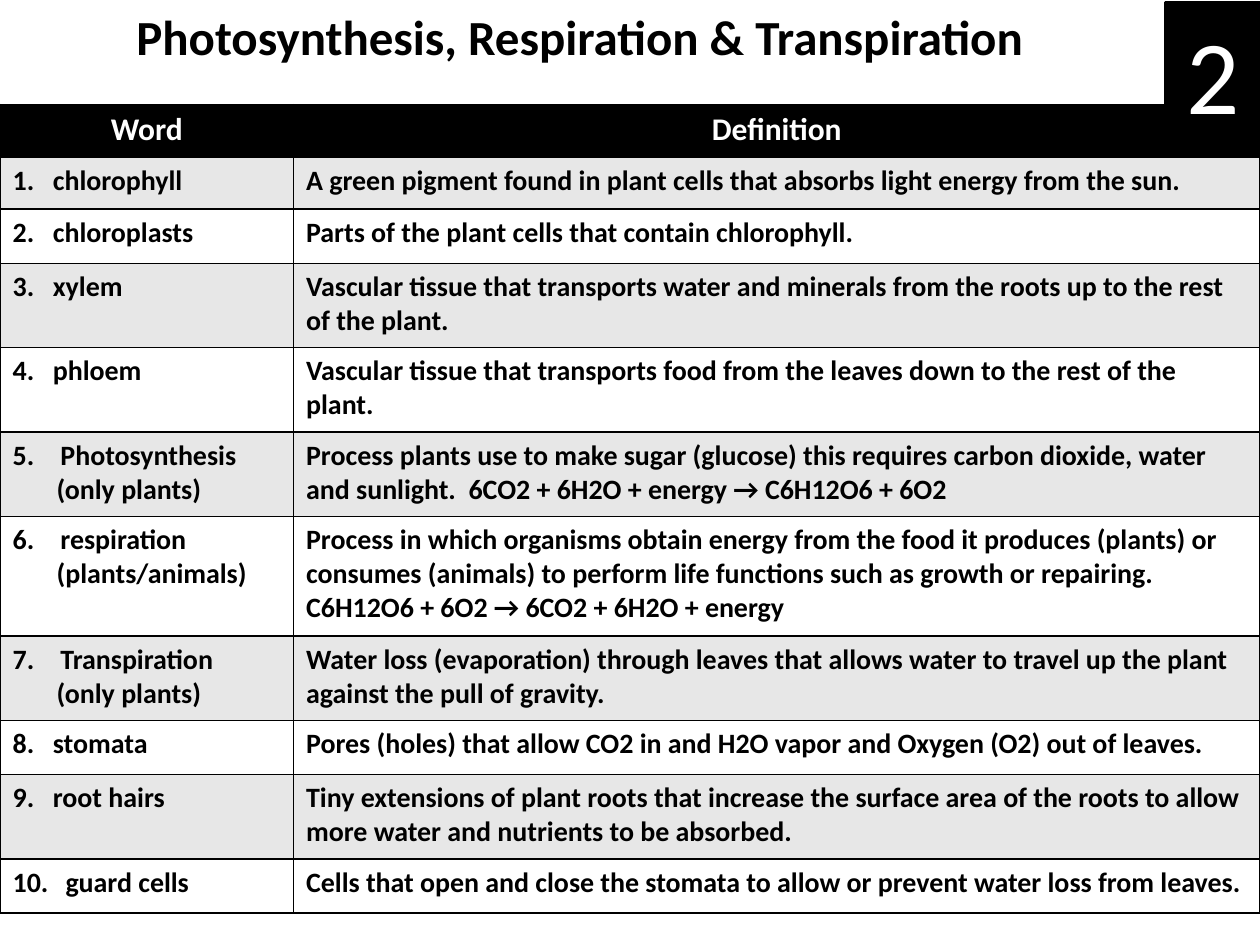
from lxml import etree
from pptx import Presentation
from pptx.dml.color import RGBColor
from pptx.enum.shapes import MSO_SHAPE
from pptx.enum.text import MSO_ANCHOR, PP_ALIGN
from pptx.oxml.ns import qn
from pptx.util import Inches, Pt

RECT = MSO_SHAPE.RECTANGLE
TOP, MIDDLE = MSO_ANCHOR.TOP, MSO_ANCHOR.MIDDLE
LEFT, CENTER = PP_ALIGN.LEFT, PP_ALIGN.CENTER
WIDTH, HEIGHT = Inches(10), Inches(7.5)
FONT = "Calibri"
HUES = {"ink": "000000", "paper": "FFFFFF", "band": "E7E7E7"}
COLS = [2.33, 7.67]
ROWS = [0.42, 0.41, 0.43, 0.67, 0.67, 0.67, 0.95, 0.67, 0.43, 0.67, 0.43]
NEAR, SUB, FAR, LAST = 0.32, 0.35, 0.38, 0.42

TERMS = [
    ("chlorophyll", "", NEAR,
     "A green pigment found in plant cells that absorbs light energy from the sun."),
    ("chloroplasts", "", NEAR,
     "Parts of the plant cells that contain chlorophyll."),
    ("xylem", "", NEAR,
     "Vascular tissue that transports water and minerals from the roots up to the rest of the plant."),
    ("phloem", "", NEAR,
     "Vascular tissue that transports food from the leaves down to the rest of the plant."),
    ("Photosynthesis", "(only plants)", FAR,
     "Process plants use to make sugar (glucose) this requires carbon dioxide, water and sunlight. "
     " 6CO2 + 6H2O + energy → C6H12O6 + 6O2"),
    ("respiration", "(plants/animals)", FAR,
     "Process in which organisms obtain energy from the food it produces (plants) or consumes "
     "(animals) to perform life functions such as growth or repairing. "
     "C6H12O6 + 6O2 → 6CO2 + 6H2O + energy"),
    ("Transpiration", "(only plants)", FAR,
     "Water loss (evaporation) through leaves that allows water to travel up the plant against "
     "the pull of gravity."),
    ("stomata", "", NEAR,
     "Pores (holes) that allow CO2 in and H2O vapor and Oxygen (O2) out of leaves."),
    ("root hairs", "", NEAR,
     "Tiny extensions of plant roots that increase the surface area of the roots to allow more "
     "water and nutrients to be absorbed."),
    ("guard cells", "", LAST,
     "Cells that open and close the stomata to allow or prevent water loss from leaves."),
]


def color(name):
    return RGBColor.from_string(HUES[name])


def write(para, text, size, hue, bold=True, align=LEFT):
    para.text = text
    para.alignment = align
    font = para.font
    font.name, font.size, font.bold = FONT, Pt(size), bold
    font.color.rgb = color(hue)


def indent(para, left, start=None):
    props = para._p.get_or_add_pPr()
    props.set("marL", str(Inches(left)))
    props.set("indent", str(-Inches(left) if start else 0))
    if start:
        face = etree.SubElement(props, qn("a:buFont"))
        face.set("typeface", "+mj-lt")
        mark = etree.SubElement(props, qn("a:buAutoNum"))
        mark.set("type", "arabicPeriod")
        mark.set("startAt", str(start))
        props.append(props.find(qn("a:defRPr")))


def border(cell):
    props = cell._tc.get_or_add_tcPr()
    for side in "LRTB":
        line = etree.SubElement(props, qn(f"a:ln{side}"), w=str(Pt(1)))
        fill = etree.SubElement(line, qn("a:solidFill"))
        etree.SubElement(fill, qn("a:srgbClr"), val=HUES["ink"])


def paint(cell, hue):
    border(cell)
    cell.fill.solid()
    cell.fill.fore_color.rgb = color(hue)


def add_terms(slide):
    frame = slide.shapes.add_table(len(ROWS), len(COLS), 0, Inches(0.83),
                                   WIDTH, Inches(sum(ROWS)))
    table = frame.table
    table.first_row = table.horz_banding = False
    for col, size in zip(table.columns, COLS):
        col.width = Inches(size)
    for row, size in zip(table.rows, ROWS):
        row.height = Inches(size)
    for cell, text in zip(table.rows[0].cells, ("Word", "Definition")):
        paint(cell, "ink")
        write(cell.text_frame.paragraphs[0], text, 18, "paper", align=CENTER)
    for num, (word, note, left, sense) in enumerate(TERMS, 1):
        term, mean = table.rows[num].cells
        for cell, text in ((term, word), (mean, sense)):
            paint(cell, "band" if num % 2 else "paper")
            write(cell.text_frame.paragraphs[0], text, 16, "ink")
        indent(term.text_frame.paragraphs[0], left, num)
        if note:
            para = term.text_frame.add_paragraph()
            write(para, note, 16, "ink")
            indent(para, SUB)


def add_badge(slide, text):
    box = slide.shapes.add_shape(RECT, Inches(9.25), Inches(0.02),
                                 Inches(0.75), Inches(1.11))
    box.shadow.inherit = False
    box.fill.solid()
    box.fill.fore_color.rgb = box.line.color.rgb = color("ink")
    box.line.width = Pt(2)
    box.text_frame.vertical_anchor = MIDDLE
    write(box.text_frame.paragraphs[0], text, 60, "paper", False, CENTER)


def set_title(slide, text):
    title = slide.shapes.title
    title.left, title.top = Inches(0.94), 0
    title.width, title.height = Inches(7.32), Inches(0.57)
    frame = title.text_frame
    frame.word_wrap = False
    frame.vertical_anchor = TOP
    write(frame.paragraphs[0], text, 28, "ink", align=CENTER)


def main():
    deck = Presentation()
    deck.slide_width, deck.slide_height = WIDTH, HEIGHT
    slide = deck.slides.add_slide(deck.slide_layouts[5])
    set_title(slide, "Photosynthesis, Respiration & Transpiration")
    add_terms(slide)
    add_badge(slide, "2")
    deck.save("out.pptx")


if __name__ == "__main__":
    main()
